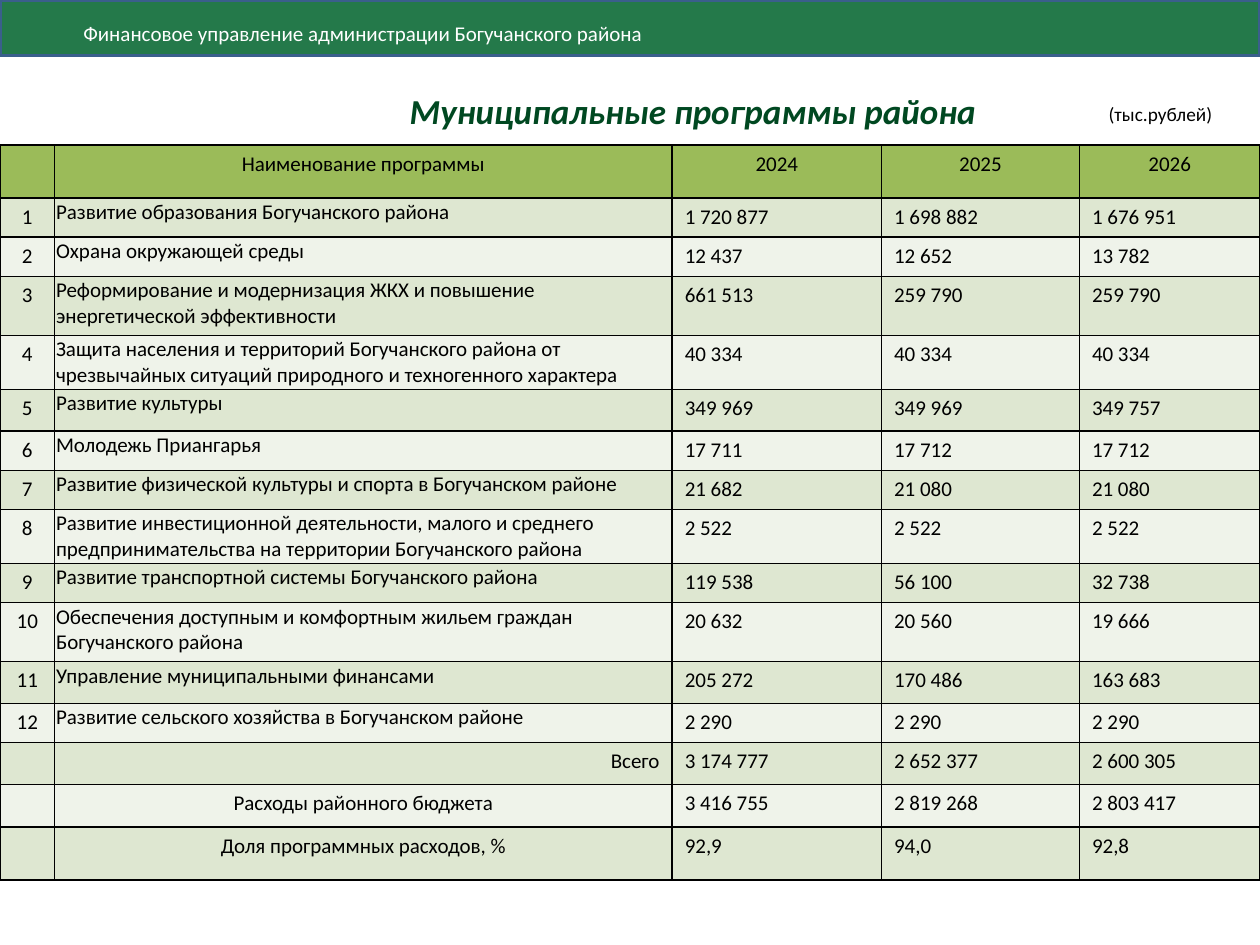
from lxml.etree import SubElement
from pptx import Presentation
from pptx.dml.color import RGBColor
from pptx.enum.shapes import MSO_SHAPE
from pptx.enum.text import MSO_ANCHOR, PP_ALIGN
from pptx.oxml.ns import qn
from pptx.util import Cm, Pt

# Content
DEPARTMENT = "Финансовое управление администрации Богучанского района"
TITLE = "Муниципальные программы района"
UNITS = "(тыс.рублей)"
HEADER = ("Наименование программы", "2024", "2025", "2026")
# Name, three yearly values, row height in cm
PROGRAMS = [
    ("Развитие образования Богучанского района", "1 720 877", "1 698 882", "1 676 951", 0.79),
    ("Охрана окружающей среды", "12 437", "12 652", "13 782", 0.79),
    ("Реформирование и модернизация ЖКХ и повышение энергетической эффективности",
     "661 513", "259 790", "259 790", 1.19),
    ("Защита населения и территорий Богучанского района от чрезвычайных ситуаций "
     "природного и техногенного характера", "40 334", "40 334", "40 334", 1.09),
    ("Развитие культуры", "349 969", "349 969", "349 757", 0.84),
    ("Молодежь Приангарья", "17 711", "17 712", "17 712", 0.79),
    ("Развитие физической культуры и спорта в Богучанском районе",
     "21 682", "21 080", "21 080", 0.79),
    ("Развитие инвестиционной деятельности, малого и среднего предпринимательства "
     "на территории Богучанского района", "2 522", "2 522", "2 522", 1.09),
    ("Развитие транспортной системы Богучанского района", "119 538", "56 100", "32 738", 0.79),
    ("Обеспечения доступным и комфортным жильем граждан Богучанского района",
     "20 632", "20 560", "19 666", 1.19),
    ("Управление муниципальными финансами", "205 272", "170 486", "163 683", 0.84),
    ("Развитие сельского хозяйства в Богучанском районе", "2 290", "2 290", "2 290", 0.79),
]
TOTALS = [
    ("Всего", "3 174 777", "2 652 377", "2 600 305", 0.84),
    ("Расходы районного бюджета", "3 416 755", "2 819 268", "2 803 417", 0.86),
    ("Доля программных расходов, %", "92,9", "94,0", "92,8", 1.07),
]
COLUMNS = (1.1, 12.45, 4.22, 3.99, 3.64)
HEADER_HEIGHT = 1.07
HEADER_FILL, BANDS = "9BBB59", ("DEE7D1", "EFF3EA")


def color(hex_string):
    return RGBColor.from_string(hex_string)


def write(tf, text, size, hex_color, align=PP_ALIGN.LEFT, bold=False, italic=False):
    tf.text = text
    p = tf.paragraphs[0]
    p.alignment = align
    for r in p.runs:
        r.font.name, r.font.size = "Calibri", Pt(size)
        r.font.bold, r.font.italic = bold, italic
        r.font.color.rgb = color(hex_color)
    if not text:  # keeps an empty cell from stretching its row
        SubElement(p._p, qn("a:endParaRPr"), sz=str(size * 100))


def add_borders(cell):
    tcPr = cell._tc.get_or_add_tcPr()
    for i, side in enumerate(("a:lnL", "a:lnR", "a:lnT", "a:lnB")):
        ln = tcPr.makeelement(qn(side), {"w": str(Pt(1))})
        fill = SubElement(ln, qn("a:solidFill"))
        SubElement(fill, qn("a:srgbClr"), val="000000")
        tcPr.insert(i, ln)


prs = Presentation()
prs.slide_width, prs.slide_height = Cm(25.4), Cm(19.05)
s = prs.slides.add_slide(prs.slide_layouts[5])

# Department bar
bar = s.shapes.add_shape(MSO_SHAPE.RECTANGLE, 0, 0, prs.slide_width, Cm(1.12))
bar.shadow.inherit = False
bar.fill.solid()
bar.fill.fore_color.rgb = color("00642D")
SubElement(bar.fill._xPr.find(qn("a:solidFill"))[0], qn("a:alpha"), val="86000")
bar.line.color.rgb = color("3A5F8C")
bar.line.width = Pt(2)
tf = bar.text_frame
tf.vertical_anchor = MSO_ANCHOR.MIDDLE
tf.margin_left, tf.margin_top, tf.margin_bottom = Cm(1.68), Cm(0.33), Cm(0.13)
write(tf, DEPARTMENT, 12, "FFFFFF")

# Title
title = s.shapes.title
title.left, title.top, title.width, title.height = Cm(2.54), Cm(1.73), Cm(22.86), Cm(1)
title.text_frame.vertical_anchor = MSO_ANCHOR.MIDDLE
write(title.text_frame, TITLE, 20, "004821", PP_ALIGN.CENTER, bold=True, italic=True)

# Programs table
rows = [("", *HEADER, HEADER_HEIGHT)]
rows += [(str(n), *program) for n, program in enumerate(PROGRAMS, 1)]
rows += [("", *total) for total in TOTALS]
height = sum(row[-1] for row in rows)
table = s.shapes.add_table(len(rows), len(COLUMNS), 0, Cm(2.92),
                           prs.slide_width, Cm(height)).table
table.first_row = table.horz_banding = False
for column, width in zip(table.columns, COLUMNS):
    column.width = Cm(width)
for i, (*texts, row_height) in enumerate(rows):
    table.rows[i].height = Cm(row_height)
    for j, text in enumerate(texts):
        cell = table.cell(i, j)
        cell.fill.solid()
        cell.fill.fore_color.rgb = color(BANDS[(i - 1) % 2] if i else HEADER_FILL)
        align = PP_ALIGN.CENTER if i == 0 or j < 2 else PP_ALIGN.LEFT
        if j == 1 and 0 < i <= len(PROGRAMS):
            align = PP_ALIGN.LEFT
            cell.margin_left = cell.margin_right = cell.margin_top = Cm(0.03)
            cell.margin_bottom = 0
        elif text == "Всего":
            align = PP_ALIGN.RIGHT
        write(cell.text_frame, text, 12, "000000", align)
        add_borders(cell)

# Units
units = s.shapes.add_textbox(Cm(22.1), Cm(1.93), Cm(3.3), Cm(0.73))
units.text_frame.word_wrap = True
write(units.text_frame, UNITS, 11, "000000")

prs.save("out.pptx")
